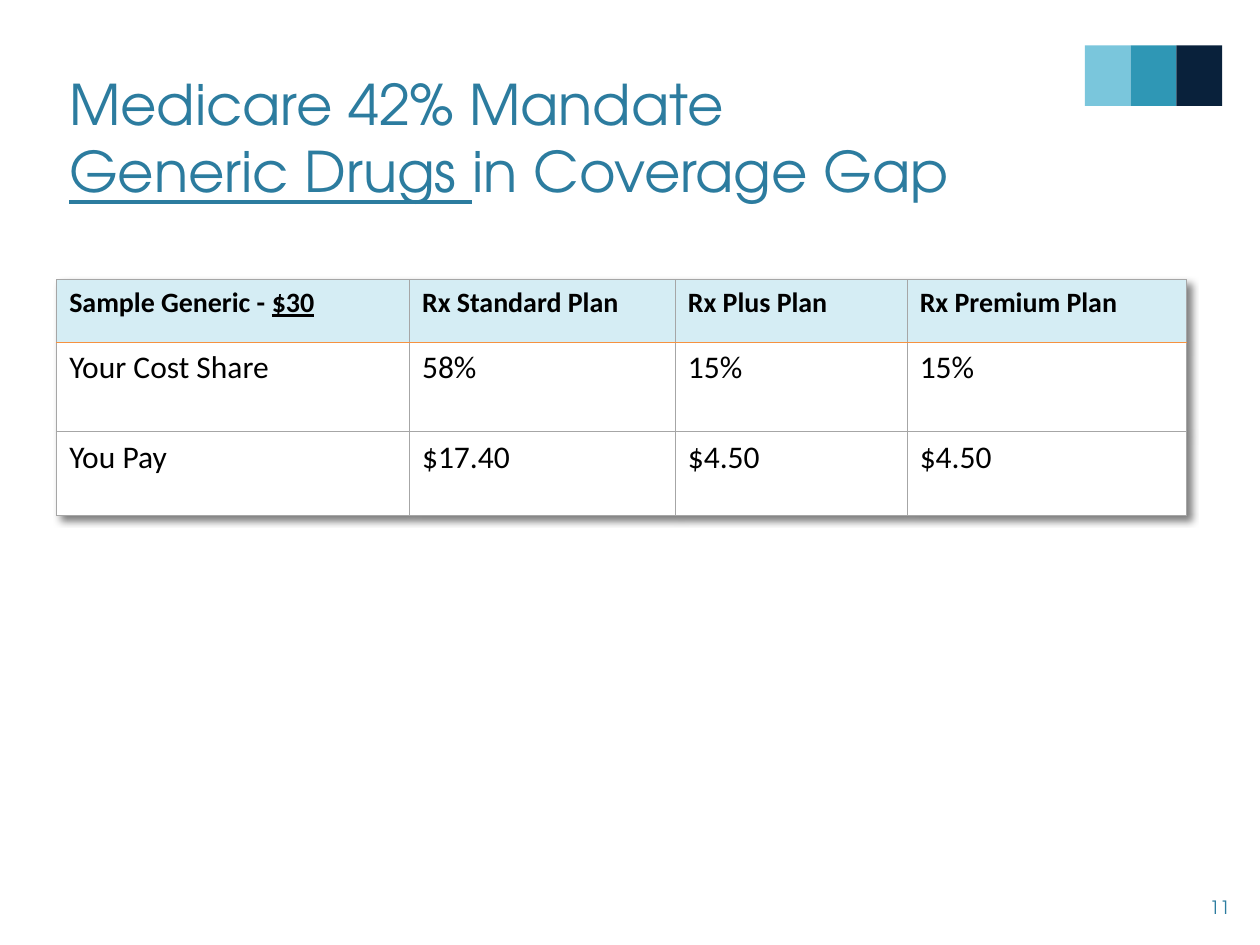
from lxml.etree import SubElement
from pptx import Presentation
from pptx.dml.color import RGBColor
from pptx.enum.shapes import MSO_SHAPE
from pptx.enum.text import MSO_ANCHOR, PP_ALIGN
from pptx.oxml import parse_xml
from pptx.oxml.ns import nsdecls, qn
from pptx.util import Pt

LIGHT_BLUE = RGBColor(0x7A, 0xC6, 0xDC)
MID_BLUE = RGBColor(0x2F, 0x97, 0xB5)
NAVY = RGBColor(0x09, 0x21, 0x3B)
TITLE_BLUE = RGBColor(0x2C, 0x7C, 0x9F)
HEADER_FILL = RGBColor(0xD5, 0xED, 0xF4)
WHITE = RGBColor(0xFF, 0xFF, 0xFF)
BLACK = RGBColor(0, 0, 0)
GRID_GRAY = RGBColor(0xA6, 0xA6, 0xA6)
ORANGE = RGBColor(0xF6, 0x92, 0x40)

HEADING = {"name": "TeX Gyre Adventor", "size": Pt(32)}
PAGE_NUMBER = {"name": "TeX Gyre Adventor", "size": Pt(10.5)}
HEADER_CELL = {"name": "Calibri", "size": Pt(16), "bold": True}
BODY_CELL = {"name": "Calibri", "size": Pt(18), "bold": False}

COLUMN_WIDTHS = [201.6, 151.9, 132.5, 159.8]
ROW_HEIGHTS = [36, 51, 48]
PLAN_ROWS = [
    [None, "Rx Standard Plan", "Rx Plus Plan", "Rx Premium Plan"],
    ["Your Cost Share", "58%", "15%", "15%"],
    ["You Pay", "$17.40", "$4.50", "$4.50"],
]
SAMPLE_HEADER = [("Sample Generic - ", False), ("$30", True)]


def add_run(paragraph, text, font_format, color, underline=False):
    run = paragraph.add_run()
    run.text = text
    for attribute, value in font_format.items():
        setattr(run.font, attribute, value)
    run.font.color.rgb = color
    if underline:
        run.font.underline = True


def add_text_area(slide, left, top, width, height, anchor, align):
    area = slide.shapes.add_textbox(Pt(left), Pt(top), Pt(width), Pt(height))
    frame = area.text_frame
    frame.word_wrap = True
    frame.vertical_anchor = anchor
    frame.paragraphs[0].alignment = align
    return frame.paragraphs[0]


def add_color_squares(slide):
    width = 26.1
    for index, color in enumerate([LIGHT_BLUE, MID_BLUE, NAVY]):
        square = slide.shapes.add_shape(
            MSO_SHAPE.RECTANGLE, Pt(620 + index * width), Pt(26), Pt(width), Pt(34.5))
        square.shadow.inherit = False
        square.fill.solid()
        square.fill.fore_color.rgb = color
        square.line.fill.background()


def set_borders(cell, colors):
    properties = cell._tc.get_or_add_tcPr()
    for side, color in colors.items():
        border = SubElement(properties, qn(f"a:{side}"), w=str(Pt(0.75)))
        fill = SubElement(border, qn("a:solidFill"))
        SubElement(fill, qn("a:srgbClr"), val=str(color))


def add_table_shadow(table):
    table._tbl.tblPr.insert(0, parse_xml(
        f'<a:effectLst {nsdecls("a")}>'
        '<a:outerShdw blurRad="50800" dist="38100" dir="2700000" algn="tl">'
        '<a:srgbClr val="000000"><a:alpha val="50000"/></a:srgbClr>'
        '</a:outerShdw></a:effectLst>'))


def add_plan_table(slide):
    table = slide.shapes.add_table(
        len(ROW_HEIGHTS), len(COLUMN_WIDTHS), Pt(32.4), Pt(159.8),
        Pt(sum(COLUMN_WIDTHS)), Pt(sum(ROW_HEIGHTS))).table
    table.horz_banding = False
    add_table_shadow(table)
    for column, width in zip(table.columns, COLUMN_WIDTHS):
        column.width = Pt(width)
    for row_index, (row, height) in enumerate(zip(table.rows, ROW_HEIGHTS)):
        row.height = Pt(height)
        is_header = row_index == 0
        for cell, text in zip(row.cells, PLAN_ROWS[row_index]):
            # An orange rule separates the header from the body
            set_borders(cell, {
                "lnL": GRID_GRAY,
                "lnR": GRID_GRAY,
                "lnT": ORANGE if row_index == 1 else GRID_GRAY,
                "lnB": ORANGE if is_header else GRID_GRAY,
            })
            cell.fill.solid()
            cell.fill.fore_color.rgb = HEADER_FILL if is_header else WHITE
            pieces = SAMPLE_HEADER if text is None else [(text, False)]
            for piece, underline in pieces:
                add_run(cell.text_frame.paragraphs[0], piece,
                        HEADER_CELL if is_header else BODY_CELL, BLACK, underline)


def main():
    presentation = Presentation()
    presentation.slide_width, presentation.slide_height = Pt(720), Pt(540)
    slide = presentation.slides.add_slide(presentation.slide_layouts[6])

    # Corner decoration
    add_color_squares(slide)

    # Title
    title = add_text_area(slide, 32.4, 30.2, 535, 90, MSO_ANCHOR.BOTTOM, PP_ALIGN.LEFT)
    add_run(title, "Medicare 42% Mandate ", HEADING, TITLE_BLUE)
    title.add_line_break()
    add_run(title, "Generic Drugs ", HEADING, TITLE_BLUE, underline=True)
    add_run(title, "in Coverage Gap", HEADING, TITLE_BLUE)

    # Plan comparison
    add_plan_table(slide)

    # Page number
    page = add_text_area(slide, 670.3, 504, 39.6, 28.8, MSO_ANCHOR.MIDDLE, PP_ALIGN.RIGHT)
    add_run(page, "11", PAGE_NUMBER, TITLE_BLUE)

    presentation.save("out.pptx")


if __name__ == "__main__":
    main()
